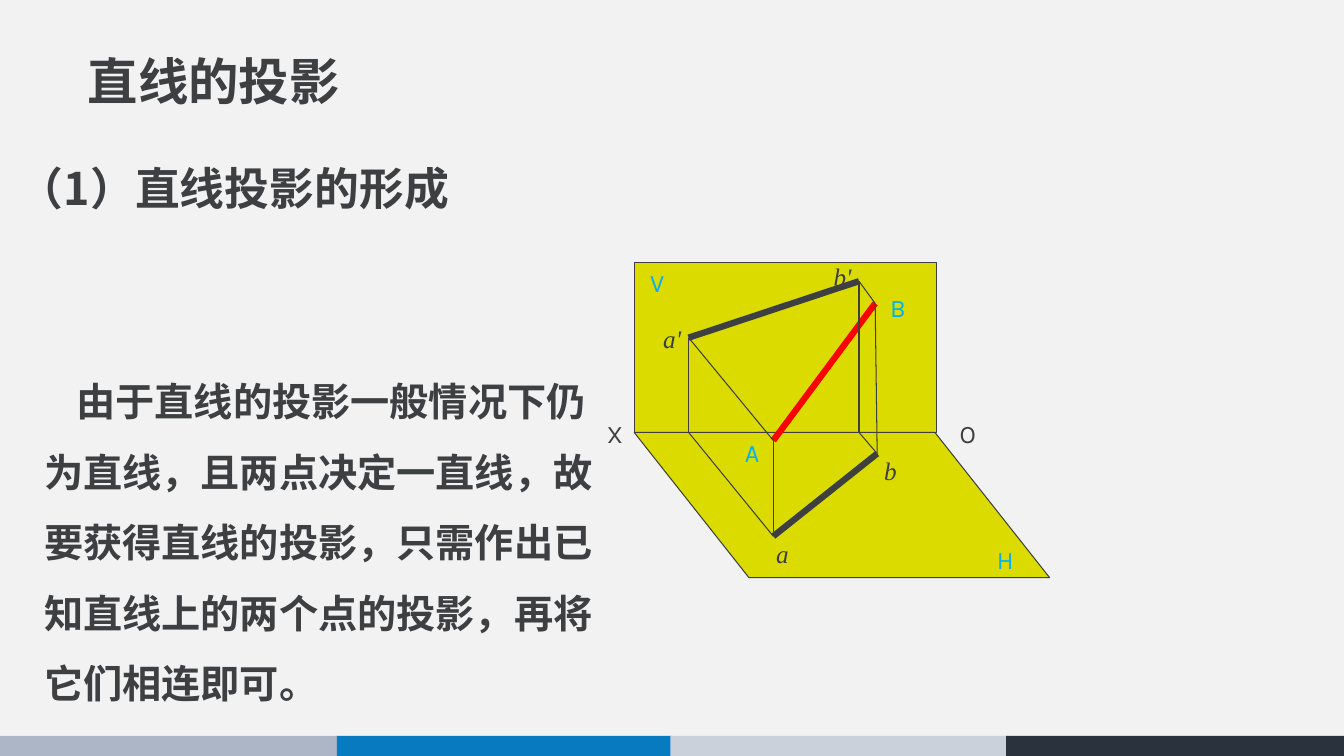
from lxml.etree import SubElement
from pptx import Presentation
from pptx.dml.color import RGBColor
from pptx.enum.shapes import MSO_CONNECTOR as Connector, MSO_SHAPE as Preset
from pptx.enum.text import MSO_ANCHOR as Anchor, PP_ALIGN as Align
from pptx.oxml.ns import qn
from pptx.util import Pt

PX = 9144
COLORS = {
    "paper": "F2F2F2", "ink": "3D3F41", "plane": "DBDB00", "label": "00B0F0", "red": "FF0000",
    "mist": "ADB6C7", "blue": "087AC0", "pale": "CBD1DB", "navy": "2A323E",
}
CJK, SANS, SERIF = "Noto Sans CJK SC", "Karla", "Times New Roman"
BODY = ("由于直线的投影一般情况下仍为直线，且两点决定一直线，故要获得直线的投影，"
        "只需作出已知直线上的两个点的投影，再将它们相连即可。")
BANDS = [("mist", 0, 335), ("blue", 334, 332), ("pale", 665, 335), ("navy", 998, 335)]
POINTS = {
    "A": (767, 437), "B": (868, 301),
    "a'": (683, 335), "b'": (852, 279),
    "a": (767, 532), "b": (870, 450),
    "ax": (683, 429), "bx": (852, 429),
}
THIN, THICK = 0.75, 4.5
EDGES = [
    ("B", "A", "red", THICK),
    ("a'", "ax", "ink", THIN), ("b'", "bx", "ink", THIN),
    ("bx", "b", "ink", THIN), ("ax", "a", "ink", THIN),
    ("a'", "A", "ink", THIN), ("b'", "B", "ink", THIN),
    ("a'", "b'", "ink", THICK),
    ("A", "a", "ink", THIN), ("B", "b", "ink", THIN),
    ("a", "b", "ink", THICK),
]
PLAIN_LABELS = [
    ("V", 635, 260, "label"), ("H", 979, 535, "label"), ("X", 592, 410, "ink"),
    ("O", 942, 410, "ink"), ("B", 873, 285, "label"), ("A", 729, 429, "label"),
]
ITALIC_LABELS = [("a'", 648, 316), ("b'", 817, 254), ("a", 760, 529), ("b", 867, 447)]


def emu(*lengths):
    """Turn px lengths into EMU."""
    return [length * PX for length in lengths]


def color(name):
    """Look up a colour by name."""
    return RGBColor.from_string(COLORS[name])


def apply(target, values):
    """Set each attribute of the target from a dict."""
    for name, value in values.items():
        setattr(target, name, value)


def write(shape, text, size, face, ink="ink", bold=False, italic=False, frame=None, layout=None):
    """Write one formatted paragraph into a shape and return the paragraph."""
    apply(shape.text_frame, frame or {})
    paragraph = shape.text_frame.paragraphs[0]
    apply(paragraph, {"alignment": Align.LEFT, **(layout or {})})
    run = paragraph.add_run()
    run.text = text
    apply(run.font, {"size": Pt(size), "name": face, "bold": bold, "italic": italic})
    run.font.color.rgb = color(ink)
    SubElement(run.font._element, qn("a:ea")).set("typeface", face)
    return paragraph


def add_text(slide, box, text, size, face, **format_values):
    """Add a text box with one paragraph."""
    return write(slide.shapes.add_textbox(*emu(*box)), text, size, face, **format_values)


def add_block(slide, preset, box, fill, line=None):
    """Add a filled preset shape, outlined when a line colour is given."""
    shape = slide.shapes.add_shape(preset, *emu(*box))
    shape.shadow.inherit = False
    shape.fill.solid()
    shape.fill.fore_color.rgb = color(fill)
    if line:
        shape.line.color.rgb = color(line)
        shape.line.width = Pt(THIN)
    else:
        shape.line.fill.background()
    return shape


def add_edge(slide, start, end, ink, width):
    """Draw a straight line between two named points."""
    edge = slide.shapes.add_connector(Connector.STRAIGHT, *emu(*POINTS[start], *POINTS[end]))
    edge.line.color.rgb = color(ink)
    edge.line.width = Pt(width)
    SubElement(edge.element.spPr, qn("a:effectLst"))


def add_title(slide):
    """Place and format the title placeholder."""
    title = slide.shapes.title
    apply(title, dict(zip(("left", "top", "width", "height"), emu(65, 21, 639, 94))))
    write(title, "直线的投影", 36, CJK, bold=True,
          frame={"vertical_anchor": Anchor.BOTTOM, "margin_left": 22 * PX, "word_wrap": True})


def add_body(slide):
    """Add the explanation with an indented first line."""
    paragraph = add_text(
        slide, (34, 283, 565, 427), BODY, 28, CJK, bold=True,
        frame={"word_wrap": True, "margin_top": 68 * PX, "margin_right": 8 * PX},
        layout={"line_spacing": Pt(50.4)})
    paragraph._p.get_or_add_pPr().set("indent", str(32 * PX))


def add_diagram(slide):
    """Draw the two projection planes, the projected line and the labels."""
    add_block(slide, Preset.RECTANGLE, (629, 260, 300, 169), "plane", "ink")
    floor = add_block(slide, Preset.PARALLELOGRAM, (629, 429, 412, 144), "plane", "ink")
    floor.adjustments[0] = 0.79
    floor.element.spPr.xfrm.set("flipH", "1")
    for edge in EDGES:
        add_edge(slide, *edge)
    for text, left, top, ink in PLAIN_LABELS:
        add_text(slide, (left, top, 44, 40), text, 18, SANS, ink=ink)
    for text, left, top in ITALIC_LABELS:
        add_text(slide, (left, top, 44, 40), text, 18, SERIF, italic=True)


def main():
    """Build the slide and save it."""
    presentation = Presentation()
    apply(presentation, dict(zip(("slide_width", "slide_height"), emu(1333, 750))))
    slide = presentation.slides.add_slide(presentation.slide_layouts[5])
    slide.background.fill.solid()
    slide.background.fill.fore_color.rgb = color("paper")
    for fill, left, width in BANDS:
        add_block(slide, Preset.RECTANGLE, (left, 730, width, 20), fill)
    add_title(slide)
    add_text(slide, (9, 154, 497, 64), "（1）直线投影的形成", 32, CJK, bold=True,
             frame={"word_wrap": True, "vertical_anchor": Anchor.MIDDLE})
    add_body(slide)
    add_diagram(slide)
    presentation.save("out.pptx")


if __name__ == "__main__":
    main()
